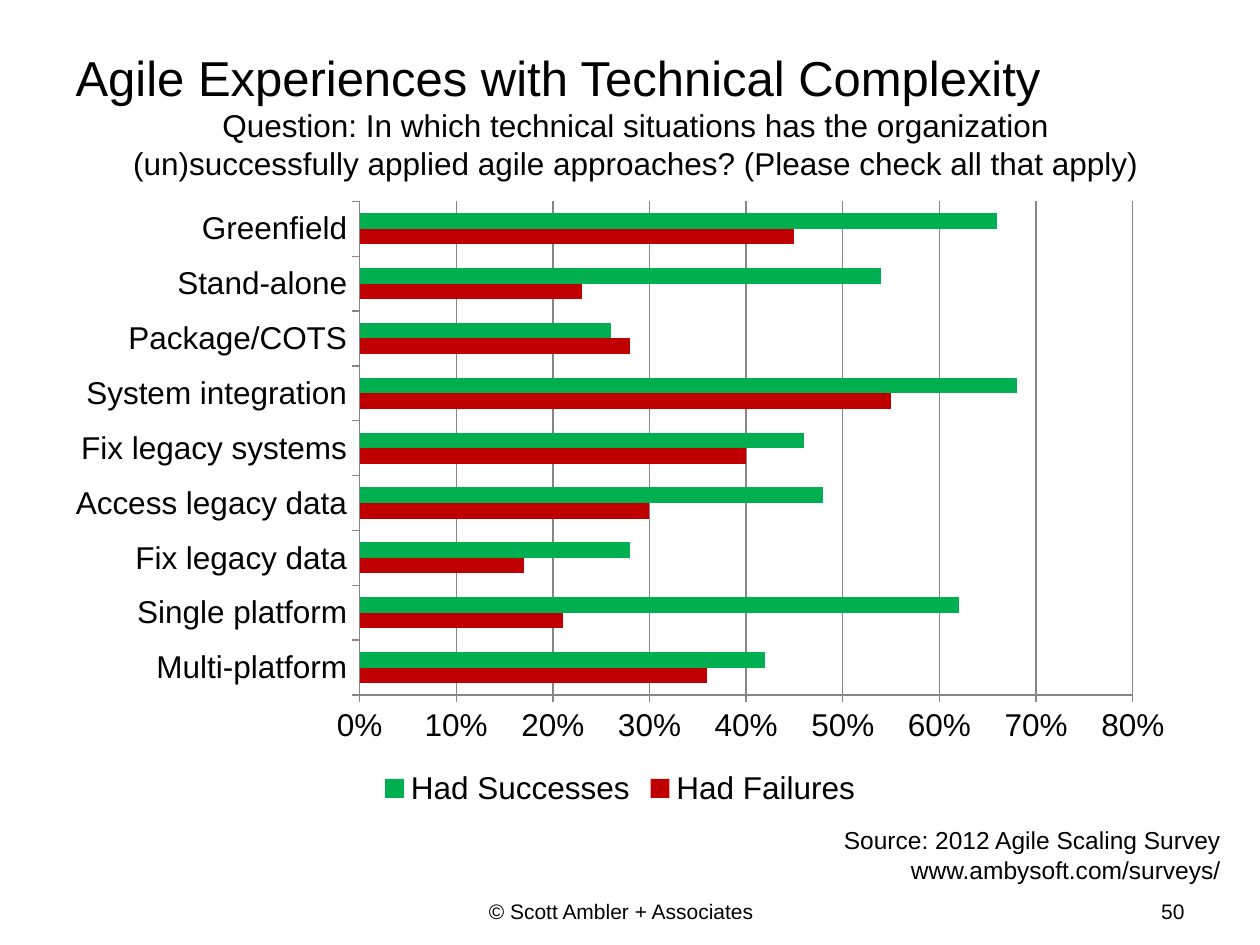
from pptx import Presentation
from pptx.chart.data import CategoryChartData
from pptx.dml.color import RGBColor
from pptx.enum.chart import XL_CHART_TYPE, XL_LEGEND_POSITION, XL_TICK_MARK
from pptx.enum.text import MSO_ANCHOR, MSO_AUTO_SIZE, PP_ALIGN
from pptx.util import Cm, Pt

BAR = XL_CHART_TYPE.BAR_CLUSTERED
BOTTOM = XL_LEGEND_POSITION.BOTTOM
OUTSIDE = XL_TICK_MARK.OUTSIDE
LEFT, CENTER, RIGHT = PP_ALIGN.LEFT, PP_ALIGN.CENTER, PP_ALIGN.RIGHT
MIDDLE = MSO_ANCHOR.MIDDLE
FIT_SHAPE = MSO_AUTO_SIZE.SHAPE_TO_FIT_TEXT
NO_FIT = MSO_AUTO_SIZE.NONE

FONT = "Arial"
COLORS = {
    "text": "000000",
    "axis": "868686",
    "failures": "C00000",
    "successes": "00B050",
}

# Technical situation: (had failures, had successes), from the bottom up
SITUATIONS = {
    "Multi-platform": (0.36, 0.42),
    "Single platform": (0.21, 0.62),
    "Fix legacy data": (0.17, 0.28),
    "Access legacy data": (0.30, 0.48),
    "Fix legacy systems": (0.40, 0.46),
    "System integration": (0.55, 0.68),
    "Package/COTS": (0.28, 0.26),
    "Stand-alone": (0.23, 0.54),
    "Greenfield": (0.45, 0.66),
}
OUTCOMES = {"Had Failures": "failures", "Had Successes": "successes"}


def color(key):
    return RGBColor.from_string(COLORS[key])


def style_font(font, size):
    font.name = FONT
    font.size = Pt(size)
    font.bold = False
    font.color.rgb = color("text")


def style_paragraphs(frame, size, align):
    for paragraph in frame.paragraphs:
        paragraph.alignment = align
        for run in paragraph.runs:
            style_font(run.font, size)


def add_title(slide, box, text):
    title = slide.shapes.title
    title.left, title.top, title.width, title.height = map(Cm, box)
    frame = title.text_frame
    frame.text = text
    frame.auto_size = NO_FIT
    frame.vertical_anchor = MIDDLE
    style_paragraphs(frame, 28, LEFT)


def add_note(slide, box, text, size, align, wrap=True, fit=NO_FIT):
    frame = slide.shapes.add_textbox(*map(Cm, box)).text_frame
    frame.text = text
    frame.word_wrap = wrap
    frame.auto_size = fit
    style_paragraphs(frame, size, align)


def add_survey_chart(slide, box):
    survey = CategoryChartData(number_format="0%")
    survey.categories = list(SITUATIONS)
    for outcome, shares in zip(OUTCOMES, zip(*SITUATIONS.values())):
        survey.add_series(outcome, shares)
    chart = slide.shapes.add_chart(BAR, *map(Cm, box), survey).chart
    chart.has_title = False
    style_font(chart.font, 18)

    # Bars
    bars = chart.plots[0]
    bars.gap_width = 150
    bars.overlap = 0
    bars.vary_by_categories = False
    for series, key in zip(bars.series, OUTCOMES.values()):
        series.format.fill.solid()
        series.format.fill.fore_color.rgb = color(key)

    # Axes and gridlines
    shares_axis = chart.value_axis
    shares_axis.minimum_scale, shares_axis.maximum_scale = 0, 0.8
    shares_axis.major_unit = 0.1
    shares_axis.tick_labels.number_format = "0%"
    shares_axis.tick_labels.number_format_is_linked = False
    shares_axis.has_major_gridlines = True
    for axis in (chart.category_axis, shares_axis):
        axis.major_tick_mark = OUTSIDE
    for line in (chart.category_axis.format.line, shares_axis.format.line,
                 shares_axis.major_gridlines.format.line):
        line.color.rgb = color("axis")
        line.width = Pt(0.75)

    # Legend
    chart.has_legend = True
    chart.legend.position = BOTTOM
    chart.legend.include_in_layout = False


def add_footer(slide, top, height):
    add_note(slide, (2.74, top, 12.7, height),
             "© Scott Ambler + Associates", 12, RIGHT)
    add_note(slide, (21.59, top, 2.54, height), "50", 12, RIGHT)


def main():
    deck = Presentation()
    deck.slide_width, deck.slide_height = Cm(25.4), Cm(19.05)
    slide = deck.slides.add_slide(deck.slide_layouts[5])

    add_title(slide, (1.27, 0.76, 22.86, 1.57),
              "Agile Experiences with Technical Complexity")
    add_survey_chart(slide, (1.07, 3.81, 22.86, 12.57))
    # Survey question
    add_note(slide, (2.11, 2.01, 21.41, 1.8),
             "Question: In which technical situations has the organization "
             "(un)successfully applied agile approaches? "
             "(Please check all that apply)", 18, CENTER, fit=FIT_SHAPE)
    # Survey source
    add_note(slide, (16.71, 16.51, 8.15, 1.45),
             "Source: 2012 Agile Scaling Survey\nwww.ambysoft.com/surveys/",
             14, RIGHT, wrap=False, fit=FIT_SHAPE)
    add_footer(slide, 17.98, 0.69)
    deck.save("out.pptx")


if __name__ == "__main__":
    main()
